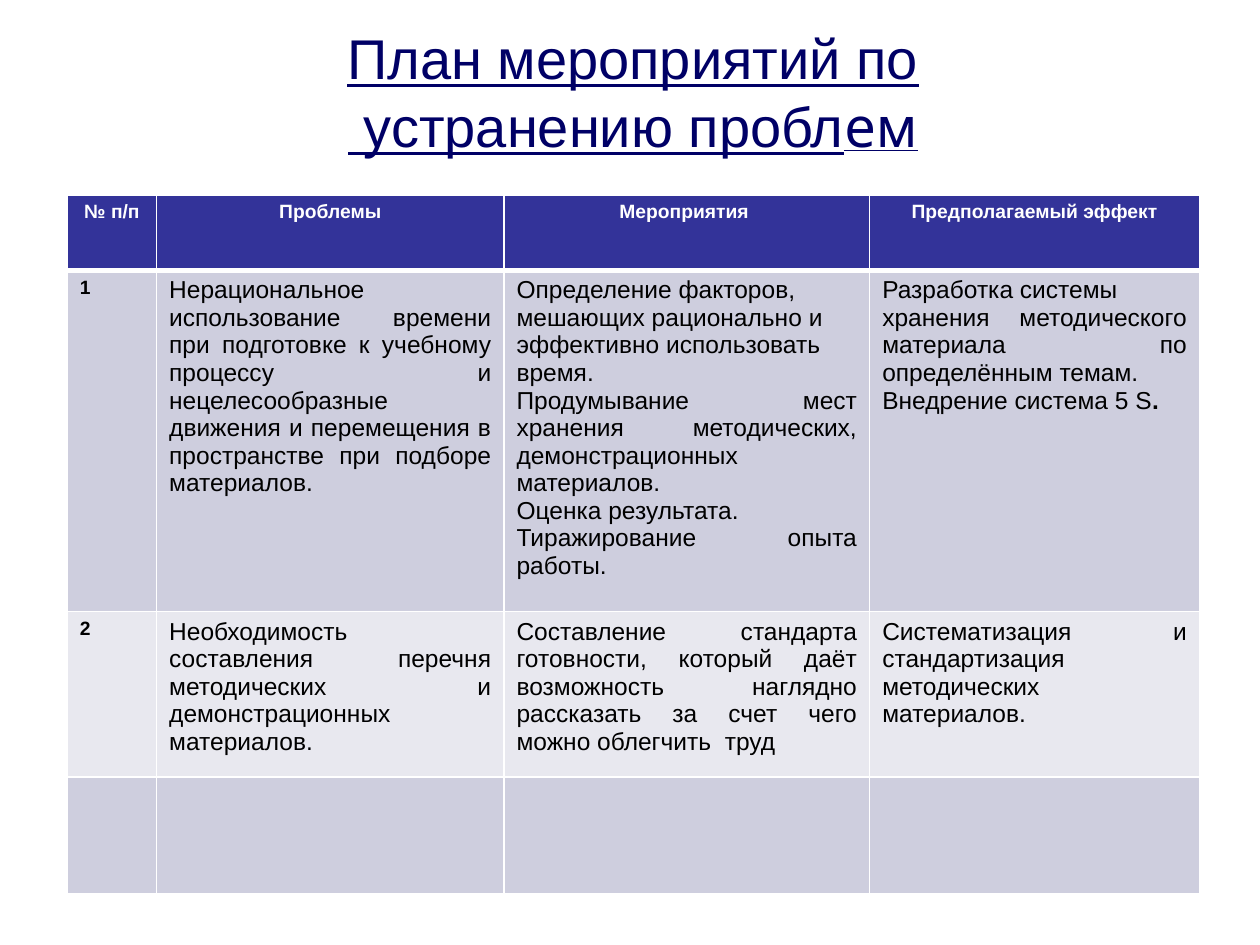
from pptx import Presentation
from pptx.dml.color import RGBColor
from pptx.enum.text import MSO_ANCHOR, PP_ALIGN
from pptx.oxml import parse_xml
from pptx.oxml.ns import nsdecls
from pptx.util import Pt

NAVY = RGBColor(0x00, 0x00, 0x66)
INDIGO = RGBColor(0x33, 0x33, 0x99)
LILAC = RGBColor(0xCE, 0xCE, 0xDE)
PALE = RGBColor(0xE8, 0xE8, 0xEF)
BLACK = RGBColor(0x00, 0x00, 0x00)
WHITE = RGBColor(0xFF, 0xFF, 0xFF)

LEFT, CENTER, JUSTIFY = PP_ALIGN.LEFT, PP_ALIGN.CENTER, PP_ALIGN.JUSTIFY

COLUMN_WIDTHS = [51, 198.5, 209, 188.5]
ROW_HEIGHTS = [43, 195, 94.5, 67]
ROW_FILLS = [INDIGO, LILAC, PALE, LILAC]

HEADINGS = ["№ п/п", "Проблемы", "Мероприятия ", "Предполагаемый эффект"]
MEASURES = [
    [
        [(JUSTIFY, ["Нерациональное использование времени при подготовке к учебному "
                    "процессу и нецелесообразные движения и перемещения в "
                    "пространстве при подборе материалов."])],
        [(LEFT, ["Определение факторов, мешающих рационально и эффективно "
                 "использовать время."]),
         (JUSTIFY, ["Продумывание мест хранения методических, "
                    "демонстрационных материалов."]),
         (JUSTIFY, ["Оценка результата."]),
         (JUSTIFY, ["Тиражирование опыта работы."])],
        [(JUSTIFY, ["Разработка системы"]),
         (JUSTIFY, ["хранения методического материала по определённым темам."]),
         (JUSTIFY, ["Внедрение система 5 S", "."])],
    ],
    [
        [(JUSTIFY, ["Необходимость составления перечня методических и "
                    "демонстрационных материалов."])],
        [(JUSTIFY, ["Составление стандарта готовности, который даёт возможность "
                    "наглядно рассказать за счет чего можно облегчить  труд"])],
        [(JUSTIFY, ["Систематизация и стандартизация методических материалов."])],
    ],
]


class PlanPage:
    """Hold the style and the current slide, and add its elements."""

    def __init__(self, deck, font="Arial"):
        self.page = deck.slides.add_slide(deck.slide_layouts[6])
        self.font = font

    def add_span(self, para, text, size, color, bold=False, underline=None, font=None):
        span = para.add_run()
        span.text = text
        span.font.name = font or self.font
        span.font.size = Pt(size)
        span.font.color.rgb = color
        span.font.bold = bold
        span.font.underline = underline

    def add_title(self, left, top, width, height, lines):
        box = self.page.shapes.add_textbox(Pt(left), Pt(top), Pt(width), Pt(height))
        frame = box.text_frame
        frame.word_wrap = False
        frame.vertical_anchor = MSO_ANCHOR.MIDDLE
        para = frame.paragraphs[0]
        para.alignment = CENTER
        for number, line in enumerate(lines):
            if number:
                para.add_line_break()
            for text, font in line:
                self.add_span(para, text, 32, NAVY, underline=True, font=font)

    def add_table(self, left, top, widths, heights, fills):
        table = self.page.shapes.add_table(
            len(heights), len(widths), Pt(left), Pt(top), Pt(sum(widths)), Pt(sum(heights))
        ).table
        for column, width in zip(table.columns, widths):
            column.width = Pt(width)
        for number, (row, height, fill) in enumerate(zip(table.rows, heights, fills)):
            row.height = Pt(height)
            for cell in row.cells:
                self.add_borders(cell, top=3 if number == 1 else 1,
                                 bottom=3 if number == 0 else 1)
                cell.fill.solid()
                cell.fill.fore_color.rgb = fill
        return table

    def add_borders(self, cell, top, bottom):
        properties = cell._tc.get_or_add_tcPr()
        for side, width in (("L", 1), ("R", 1), ("T", top), ("B", bottom)):
            properties.append(parse_xml(
                f'<a:ln{side} {nsdecls("a")} w="{Pt(width)}"><a:solidFill>'
                f'<a:srgbClr val="{WHITE}"/></a:solidFill></a:ln{side}>'
            ))

    def add_label(self, cell, text, color, alignment):
        para = cell.text_frame.paragraphs[0]
        para.alignment = alignment
        self.add_span(para, text, 11, color, bold=True)

    def add_body(self, cell, paragraphs):
        frame = cell.text_frame
        for number, (alignment, texts) in enumerate(paragraphs):
            para = frame.add_paragraph() if number else frame.paragraphs[0]
            para.alignment = alignment
            for text in texts:
                self.add_span(para, text, 14, BLACK, bold=text == ".")


def main():
    deck = Presentation()
    deck.slide_width, deck.slide_height = Pt(720), Pt(540)
    plan = PlanPage(deck)
    plan.add_title(190, 9.5, 343.5, 85, [
        [("План мероприятий по", "Arial")],
        [(" устранению пробл", "Arial"), ("ем", "League Spartan")],
    ])
    table = plan.add_table(38.5, 111.5, COLUMN_WIDTHS, ROW_HEIGHTS, ROW_FILLS)
    for column, heading in enumerate(HEADINGS):
        plan.add_label(table.cell(0, column), heading, WHITE, CENTER)
    for row, bodies in enumerate(MEASURES, 1):
        plan.add_label(table.cell(row, 0), str(row), BLACK, LEFT)
        for column, paragraphs in enumerate(bodies, 1):
            plan.add_body(table.cell(row, column), paragraphs)
    deck.save("out.pptx")


if __name__ == "__main__":
    main()
